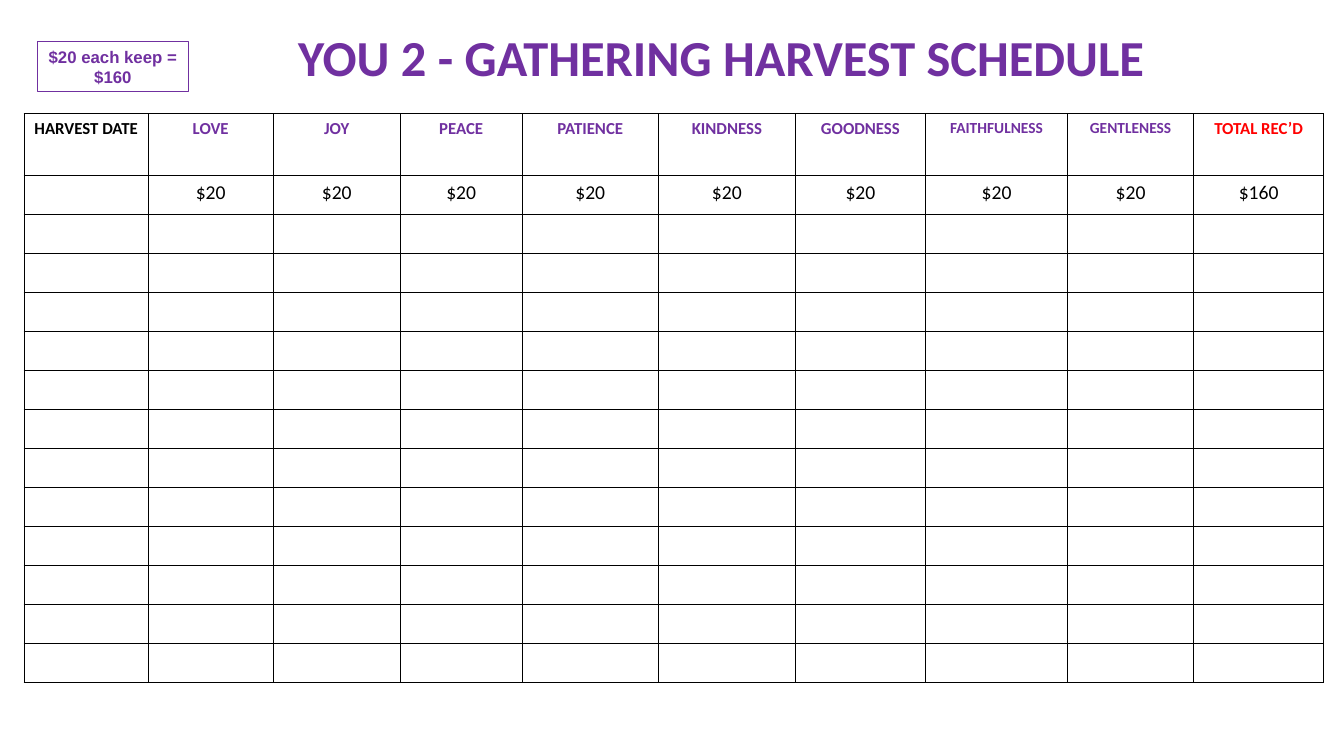
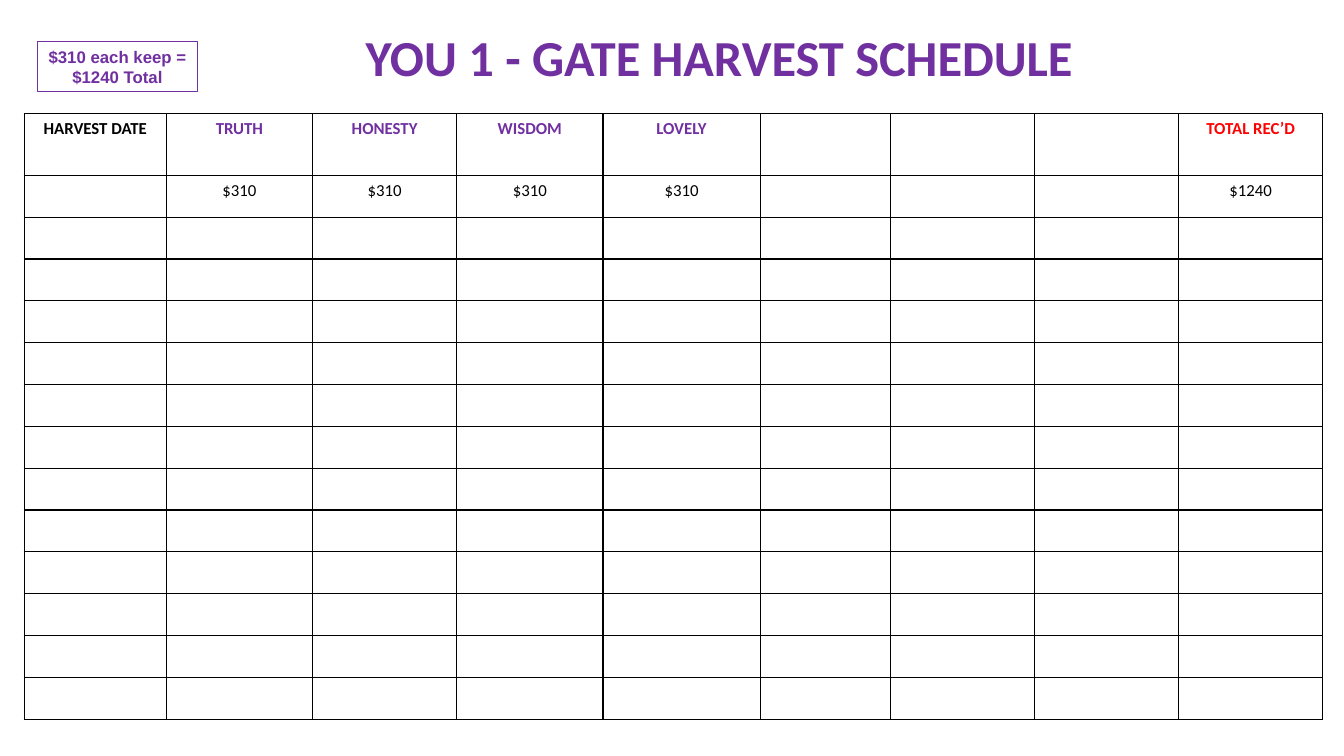
from dataclasses import dataclass

from lxml.etree import SubElement
from pptx import Presentation
from pptx.dml.color import RGBColor
from pptx.enum.shapes import MSO_SHAPE
from pptx.enum.text import MSO_ANCHOR, PP_ALIGN
from pptx.oxml.ns import qn
from pptx.util import Pt

PX = 9144  # EMU; 100 px to the inch
PURPLE, RED, BLACK = "7030A0", "FF0000", "000000"
DATE, TOTAL = "HARVEST DATE", "TOTAL REC’D"
BLANK_LAYOUT = 6
HEADER_HEIGHT = 61
ROW_COUNT = 14


@dataclass(frozen=True)
class Column:
    width: int
    heading: str = ""
    amount: str = ""
    size: int = 12


@dataclass(frozen=True)
class Schedule:
    title: str
    title_left: int
    title_width: int
    note: str
    note_width: int
    row_height: int
    amount_size: int
    blank_size: int
    columns: list[Column]


SCHEDULES = [
    Schedule(
        "YOU 2 - GATHERING HARVEST SCHEDULE", 280, 871,
        "$20 each keep = $160", 150, 37, 14, 16,
        [
            Column(123, DATE),
            Column(124, "LOVE", "$20"),
            Column(126, "JOY", "$20"),
            Column(121, "PEACE", "$20"),
            Column(135, "PATIENCE", "$20"),
            Column(136, "KINDNESS", "$20"),
            Column(129, "GOODNESS", "$20"),
            Column(141, "FAITHFULNESS", "$20", 11),
            Column(125, "GENTLENESS", "$20", 11),
            Column(129, TOTAL, "$160"),
        ],
    ),
    Schedule(
        "YOU 1 - GATE HARVEST SCHEDULE", 312, 803,
        "$310 each keep = $1240 Total", 159, 40, 12, 18,
        [
            Column(141, DATE),
            Column(145, "TRUTH", "$310"),
            Column(143, "HONESTY", "$310"),
            Column(145, "WISDOM", "$310"),
            Column(156, "LOVELY", "$310"),
            Column(129),
            Column(143),
            Column(143),
            Column(143, TOTAL, "$1240"),
        ],
    ),
]


def px(*lengths: int) -> list[int]:
    return [length * PX for length in lengths]


def rgb(color: str) -> RGBColor:
    return RGBColor.from_string(color)


def write(tf, text: str, *, size: int, color: str = PURPLE, bold: bool = True,
          font: str = "Calibri") -> None:
    tf.word_wrap = True
    p = tf.paragraphs[0]
    p.alignment = PP_ALIGN.CENTER
    r = p.add_run()
    r.text = text
    r.font.size = Pt(size)
    r.font.name = font
    r.font.bold = bold
    r.font.color.rgb = rgb(color)


def add_borders(cell) -> None:
    tc_pr = cell._tc.get_or_add_tcPr()
    for side in ("lnL", "lnR", "lnT", "lnB"):
        line = SubElement(tc_pr, qn(f"a:{side}"), w=str(Pt(1)))
        fill = SubElement(line, qn("a:solidFill"))
        SubElement(fill, qn("a:srgbClr"), val=BLACK)


def set_blank_size(cell, size: int) -> None:
    """Set the text size that gives an empty cell its least height."""
    p = cell.text_frame.paragraphs[0]
    SubElement(p._p, qn("a:endParaRPr"), sz=str(size * 100))


def add_schedule_table(s, schedule: Schedule) -> None:
    columns = schedule.columns
    width = sum(column.width for column in columns)
    height = HEADER_HEIGHT + (ROW_COUNT - 1) * schedule.row_height
    table = s.shapes.add_table(ROW_COUNT, len(columns),
                               *px(24, 113, width, height)).table
    table.first_row = table.horz_banding = False
    table.rows[0].height = HEADER_HEIGHT * PX
    heading_colors = {DATE: BLACK, TOTAL: RED}

    for i, column in enumerate(columns):
        table.columns[i].width = column.width * PX
        for j in range(ROW_COUNT):
            cell = table.cell(j, i)
            add_borders(cell)
            cell.fill.background()
            if j == 0 and column.heading:
                write(cell.text_frame, column.heading, size=column.size,
                      color=heading_colors.get(column.heading, PURPLE))
            elif j == 1 and column.amount:
                write(cell.text_frame, column.amount, bold=False,
                      size=schedule.amount_size, color=BLACK)
            else:
                set_blank_size(cell, schedule.blank_size)


def add_title(s, schedule: Schedule) -> None:
    box = s.shapes.add_textbox(
        *px(schedule.title_left, 21, schedule.title_width, 71))
    write(box.text_frame, schedule.title, size=36)


def add_note(s, schedule: Schedule) -> None:
    sp = s.shapes.add_shape(MSO_SHAPE.RECTANGLE,
                            *px(37, 41, schedule.note_width, 50))
    sp.shadow.inherit = False
    sp.fill.background()
    sp.line.color.rgb = rgb(PURPLE)
    sp.line.width = Pt(0.75)
    sp.text_frame.vertical_anchor = MSO_ANCHOR.MIDDLE
    write(sp.text_frame, schedule.note, size=12, font="Arial")


def main() -> None:
    prs = Presentation()
    prs.slide_width, prs.slide_height = px(1333, 750)
    for schedule in SCHEDULES:
        s = prs.slides.add_slide(prs.slide_layouts[BLANK_LAYOUT])
        add_schedule_table(s, schedule)
        add_title(s, schedule)
        add_note(s, schedule)
    prs.save("out.pptx")


if __name__ == "__main__":
    main()
